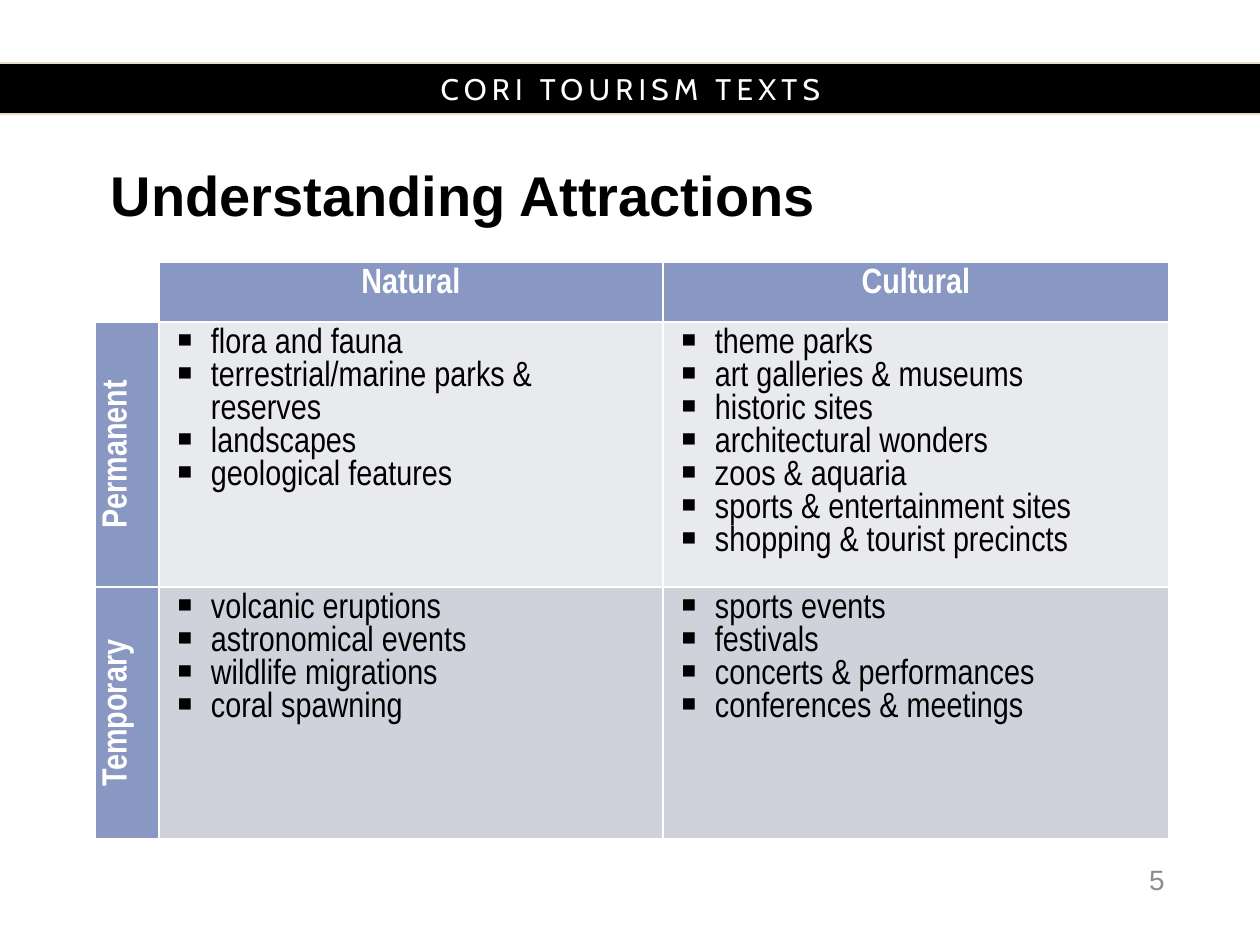
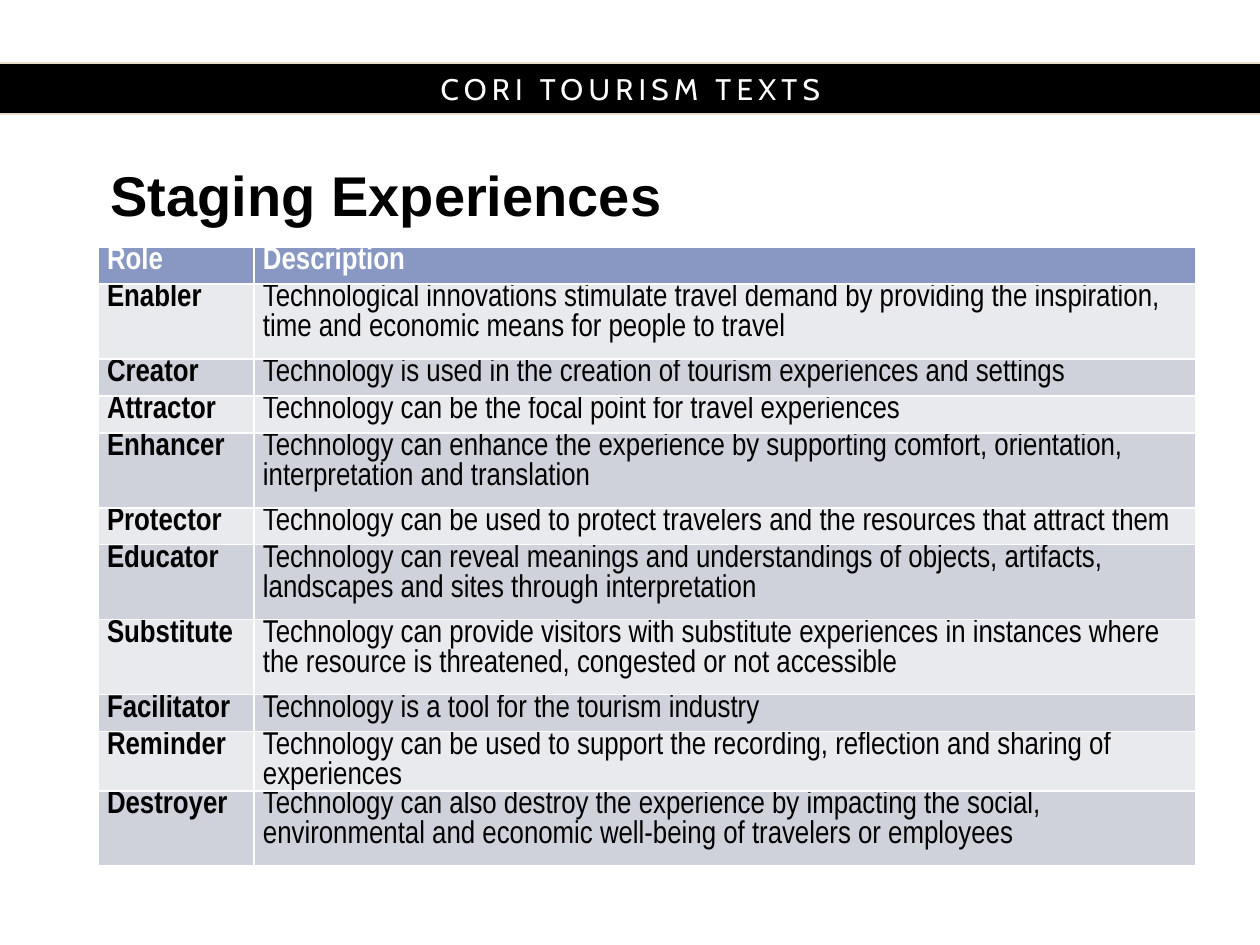
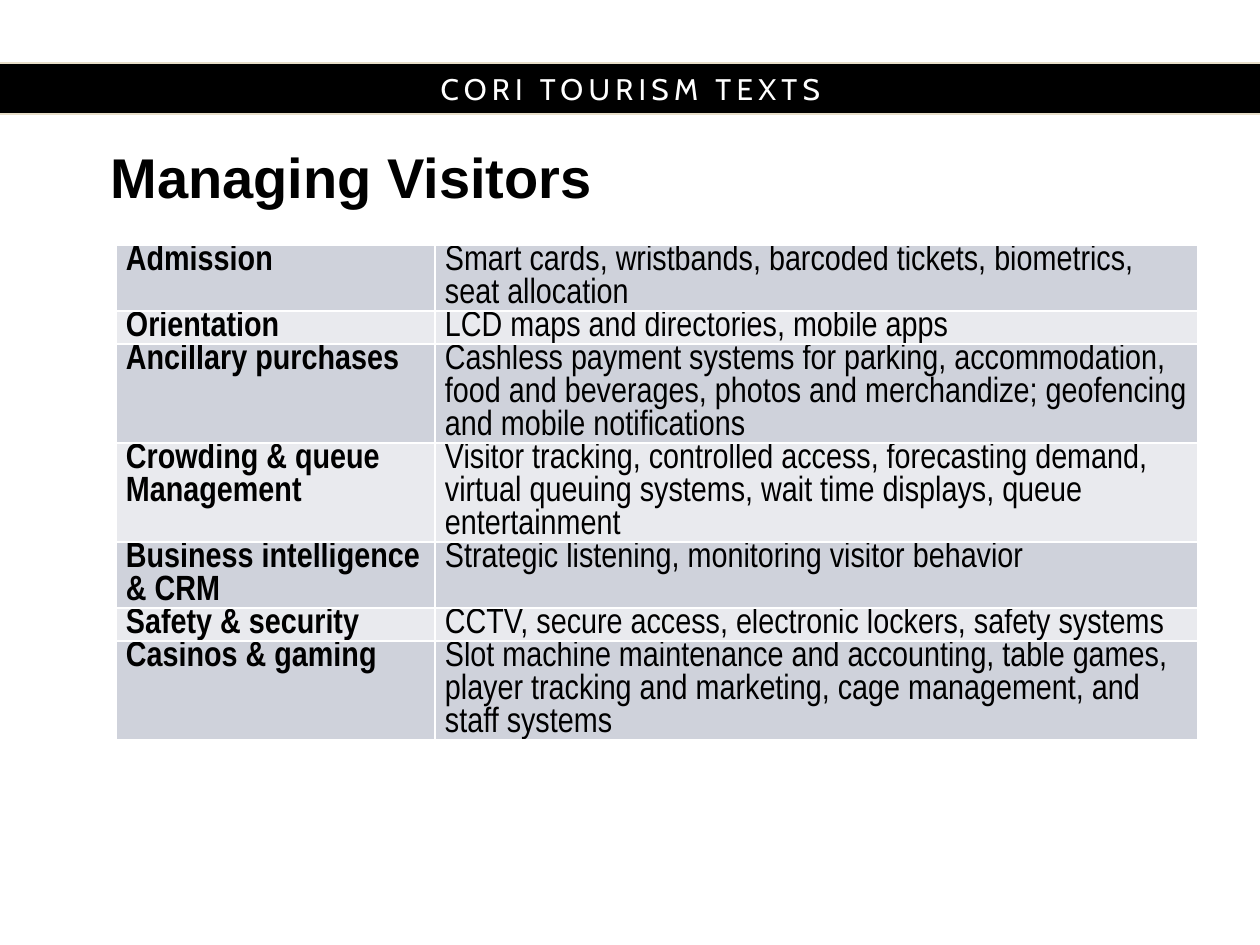
from lxml import etree
from pptx import Presentation
from pptx import util as u
from pptx.dml.color import RGBColor
from pptx.enum import shapes, text
from pptx.oxml.ns import qn

PX = 914400 // 126
BLACK, WHITE, GREY, TAN = "000000", "FFFFFF", "8C8C8C", "E7DEC9"
BLUE, LIGHT, DARK = "8898C3", "E9EAEE", "CFD2DB"
BULLET_INDENT = 39
ALIGN = text.PP_ALIGN


def put_text(paragraph, content, face, size, color, bold=False, align=ALIGN.LEFT):
    run = paragraph.add_run()
    run.text = content
    for name, value in {"name": face, "size": u.Pt(size), "bold": bold}.items():
        setattr(run.font, name, value)
    run.font.color.rgb = RGBColor.from_string(color)
    paragraph.alignment = align
    return run


def style_cell(cell, fill, side, top):
    """Fill the cell, set its margins and rule it in white on all sides."""
    cell.fill.solid()
    cell.fill.fore_color.rgb = RGBColor.from_string(fill)
    cell.margin_left = cell.margin_right = side * PX
    cell.margin_top = cell.margin_bottom = top * PX
    properties = cell._tc.get_or_add_tcPr()
    for place, edge in enumerate(("lnL", "lnR", "lnT", "lnB")):
        line = etree.Element(qn("a:" + edge), w=str(u.Pt(1)))
        paint = etree.SubElement(line, qn("a:solidFill"))
        etree.SubElement(paint, qn("a:srgbClr"), val=WHITE)
        properties.insert(place, line)


attractions = [
    ["", "Natural", "Cultural"],
    ["Permanent",
     ["flora and fauna", "terrestrial/marine parks & reserves", "landscapes",
      "geological features"],
     ["theme parks", "art galleries & museums", "historic sites",
      "architectural wonders", "zoos & aquaria", "sports & entertainment sites",
      "shopping & tourist precincts"]],
    ["Temporary",
     ["volcanic eruptions", "astronomical events", "wildlife migrations",
      "coral spawning"],
     ["sports events", "festivals", "concerts & performances",
      "conferences & meetings"]],
]
roles = [
    ["Role", "Description"],
    ["Enabler", "Technological innovations stimulate travel demand by providing the "
     "inspiration, time and economic means for people to travel"],
    ["Creator", "Technology is used in the creation of tourism experiences and settings"],
    ["Attractor", "Technology can be the focal point for travel experiences"],
    ["Enhancer", "Technology can enhance the experience by supporting comfort, "
     "orientation, interpretation and translation"],
    ["Protector", "Technology can be used to protect travelers and the resources "
     "that attract them"],
    ["Educator", "Technology can reveal meanings and understandings of objects, "
     "artifacts, landscapes and sites through interpretation"],
    ["Substitute", "Technology can provide visitors with substitute experiences in "
     "instances where the resource is threatened, congested or not accessible"],
    ["Facilitator", "Technology is a tool for the tourism industry"],
    ["Reminder", "Technology can be used to support the recording, reflection and "
     "sharing of experiences"],
    ["Destroyer", "Technology can also destroy the experience by impacting the social, "
     "environmental and economic well-being of travelers or employees"],
]
visitor_systems = [
    ["Admission", "Smart cards, wristbands, barcoded tickets, biometrics, seat allocation"],
    ["Orientation", "LCD maps and directories, mobile apps"],
    ["Ancillary purchases", "Cashless payment systems for parking, accommodation, food and "
     "beverages, photos and merchandize; geofencing and mobile notifications"],
    ["Crowding & queue Management", "Visitor tracking, controlled access, forecasting "
     "demand, virtual queuing systems, wait time displays, queue entertainment"],
    ["Business intelligence & CRM", "Strategic listening, monitoring visitor behavior"],
    ["Safety & security", "CCTV, secure access, electronic lockers, safety systems"],
    ["Casinos & gaming", "Slot machine maintenance and accounting, table games, player "
     "tracking and marketing, cage management, and staff systems"],
]

topics = [
    {"title": "Understanding Attractions", "title_top": 170, "grid": attractions,
     "left": 95, "top": 262, "columns": [64, 504, 506], "rows": [60, 265, 252],
     "size": 20, "margins": (13, 6), "bands": [LIGHT, DARK], "header": True,
     "matrix": True},
    {"title": "Staging Experiences", "title_top": 170, "grid": roles,
     "left": 98, "top": 247, "columns": [156, 942],
     "rows": [37, 75, 37, 37, 75, 37, 75, 75, 37, 59, 75],
     "size": 18, "margins": (9, 0), "bands": [LIGHT, DARK], "header": True,
     "matrix": False},
    {"title": "Managing Visitors", "title_top": 152, "grid": visitor_systems,
     "left": 116, "top": 245, "columns": [319, 763],
     "rows": [33 * lines for lines in (2, 1, 3, 3, 2, 1, 3)],
     "size": 20, "margins": (10, 0), "bands": [DARK, LIGHT], "header": False,
     "matrix": False},
]

deck = Presentation()
deck.slide_width, deck.slide_height = 1260 * PX, 945 * PX
title_only = deck.slide_layouts[5]
slides = [deck.slides.add_slide(title_only) for topic in topics]

# The series band is drawn once and moved to the shared layout
band = slides[0].shapes.add_shape(
    shapes.MSO_SHAPE.RECTANGLE, -10 * PX, 63 * PX, 1281 * PX, 51 * PX)
band.shadow.inherit = False
band.fill.solid()
band.fill.fore_color.rgb = RGBColor.from_string(BLACK)
band.line.color.rgb = RGBColor.from_string(TAN)
band.line.width = u.Pt(0.75)
band.text_frame.vertical_anchor = text.MSO_ANCHOR.MIDDLE
series = put_text(band.text_frame.paragraphs[0], "CORI TOURISM TEXTS", "Cabin", 17,
                  WHITE, align=ALIGN.CENTER)
series._r.get_or_add_rPr().set("spc", "300")
band.element.nvSpPr.cNvPr.set("id", "20")
title_only.shapes.element.append(band.element)

for slide, topic in zip(slides, topics):
    heading = slide.shapes.title
    heading.left, heading.top = 98 * PX, topic["title_top"] * PX
    heading.width, heading.height = 1075 * PX, 60 * PX
    heading.text_frame.vertical_anchor = text.MSO_ANCHOR.MIDDLE
    heading.text_frame.auto_size = text.MSO_AUTO_SIZE.NONE
    heading_line = heading.text_frame.paragraphs[0]
    heading_line.line_spacing = u.Pt(32)
    put_text(heading_line, topic["title"], "Arial", 32, BLACK, bold=True)

    columns, rows = topic["columns"], topic["rows"]
    table = slide.shapes.add_table(
        len(rows), len(columns), topic["left"] * PX, topic["top"] * PX,
        sum(columns) * PX, sum(rows) * PX).table
    table.first_row = table.horz_banding = False
    for column, width in zip(table.columns, columns):
        column.width = width * PX
    for row, height in zip(table.rows, rows):
        row.height = height * PX

    for r, entries in enumerate(topic["grid"]):
        for c, entry in enumerate(entries):
            cell = table.cell(r, c)
            is_label = c == 0
            is_header = topic["header"] and r == 0 or topic["matrix"] and is_label
            fill = BLUE if is_header else topic["bands"][(r - topic["header"]) % 2]
            style_cell(cell, fill if entry else WHITE, *topic["margins"])
            if not entry:
                continue
            if topic["matrix"] and is_label:
                cell._tc.get_or_add_tcPr().set("vert", "vert270")
            bulleted = isinstance(entry, list)
            for n, item in enumerate(entry if bulleted else [entry]):
                frame = cell.text_frame
                paragraph = frame.add_paragraph() if n else frame.paragraphs[0]
                if bulleted:
                    settings = paragraph._p.get_or_add_pPr()
                    settings.set("marL", str(BULLET_INDENT * PX))
                    settings.set("indent", str(-BULLET_INDENT * PX))
                    etree.SubElement(settings, qn("a:buChar"), char="▪")
                put_text(paragraph, item, "Arial Narrow", topic["size"],
                         WHITE if is_header else BLACK, is_header or is_label,
                         ALIGN.CENTER if topic["matrix"] and is_header else ALIGN.LEFT)

page_number = slides[0].shapes.add_textbox(883 * PX, 854 * PX, 294 * PX, 50 * PX).text_frame
page_number.word_wrap = True
page_number.vertical_anchor = text.MSO_ANCHOR.MIDDLE
put_text(page_number.paragraphs[0], "5", "Arial", 16, GREY, align=ALIGN.RIGHT)

deck.save("out.pptx")
